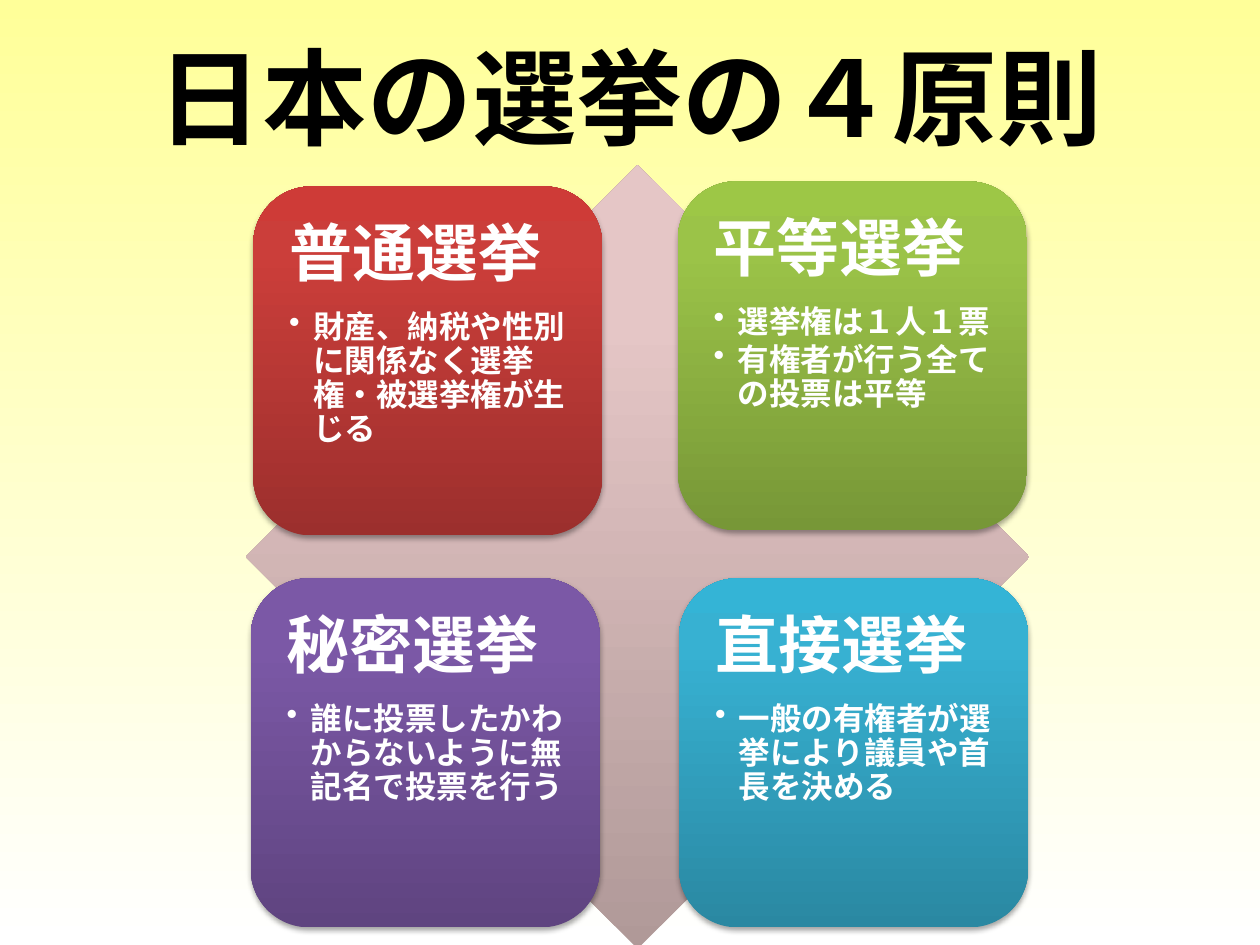
from lxml.etree import SubElement as Sub
from pptx import Presentation
from pptx.dml.color import RGBColor as Rgb
from pptx.enum.shapes import MSO_SHAPE as Kind
from pptx.enum.text import MSO_ANCHOR as Anchor, PP_ALIGN as Align
from pptx.oxml.ns import qn
from pptx.util import Inches, Pt

FONT = "Noto Sans CJK JP"
BLACK, WHITE = Rgb(0, 0, 0), Rgb(255, 255, 255)
CREAM = Rgb(0xFF, 0xFF, 0x99)
# Gradient stops at 0, 80 and 100 percent, from the bottom up
PINK = [Rgb(0xB0, 0x99, 0x98), Rgb(0xE5, 0xC6, 0xC6), Rgb(0xE6, 0xC7, 0xC6)]
RED = [Rgb(0x9C, 0x2F, 0x2D), Rgb(0xCB, 0x3E, 0x3A), Rgb(0xCE, 0x3B, 0x37)]
GREEN = [Rgb(0x77, 0x97, 0x37), Rgb(0x9B, 0xC3, 0x48), Rgb(0x9D, 0xC7, 0x46)]
PURPLE = [Rgb(0x5F, 0x44, 0x80), Rgb(0x7B, 0x58, 0xA6), Rgb(0x7C, 0x57, 0xA8)]
BLUE = [Rgb(0x2A, 0x88, 0xA2), Rgb(0x37, 0xB1, 0xD2), Rgb(0x34, 0xB4, 0xD6)]

SIDE = Inches(2.77)
CARDS = [
    (2.01, 1.48, RED, "普通選挙",
     ["財産、納税や性別に関係なく選挙権・被選挙権が生じる"]),
    (5.38, 1.44, GREEN, "平等選挙",
     ["選挙権は１人１票", "有権者が行う全ての投票は平等"]),
    (1.99, 4.59, PURPLE, "秘密選挙",
     ["誰に投票したかわからないように無記名で投票を行う"]),
    (5.39, 4.59, BLUE, "直接選挙",
     ["一般の有権者が選挙により議員や首長を決める"]),
]


def shade(fill, root, stops, angle):
    """Swap a solid fill under root for a linear gradient."""
    fill.solid()
    old = next(root.iter(qn("a:solidFill")))
    grad = old.makeelement(qn("a:gradFill"), {"rotWithShape": "1"})
    group = Sub(grad, qn("a:gsLst"))
    for place, tone in stops:
        stop = Sub(group, qn("a:gs"), pos=str(place * 1000))
        Sub(stop, qn("a:srgbClr"), val=str(tone))
    Sub(grad, qn("a:lin"), ang=str(angle * 60000), scaled="0")
    old.getparent().replace(old, grad)


def block(slide, kind, box, tones):
    """Add a preset shape with a rising gradient and no line."""
    shape = slide.shapes.add_shape(kind, *box)
    shape.shadow.inherit = False
    shade(shape.fill, shape._element.spPr, zip((0, 80, 100), tones), 270)
    shape.line.fill.background()
    return shape


def cast(shape):
    """Give a shape a soft shadow below."""
    effect = shape._element.spPr.find(qn("a:effectLst"))
    shadow = Sub(effect, qn("a:outerShdw"), blurRad=str(Pt(3.1)),
                 dist=str(Pt(1.8)), dir="5400000", rotWithShape="0")
    tone = Sub(shadow, qn("a:srgbClr"), val=str(BLACK))
    Sub(tone, qn("a:alpha"), val="35000")


def write(para, text, size, tone):
    """Add one bold run."""
    run = para.add_run()
    run.text = text
    font = run.font
    font.name, font.size, font.bold = FONT, Pt(size), True
    font.color.rgb = tone
    Sub(font._element, qn("a:ea"), typeface=FONT)


def frame(slide, box, inset):
    """Add a wrapping text box and return its text frame."""
    text = slide.shapes.add_textbox(*box).text_frame
    text.word_wrap = True
    text.margin_left = text.margin_right = inset
    text.margin_top = text.margin_bottom = inset
    return text


def bullet(para):
    """Set a hanging bullet."""
    props = para._p.get_or_add_pPr()
    props.set("marL", str(Inches(0.19)))
    props.set("indent", str(-Inches(0.19)))
    Sub(props, qn("a:buChar"), char="•")


def title(slide, box):
    text = frame(slide, box, Inches(0.05))
    text.vertical_anchor = Anchor.MIDDLE
    para = text.paragraphs[0]
    para.alignment = Align.CENTER
    write(para, "日本の選挙の４原則", 60, BLACK)


def card(slide, box, tones, head, points):
    left, top, width, height = box
    cast(block(slide, Kind.ROUNDED_RECTANGLE, box, tones))
    pad = Inches(0.135)
    inner = left + pad, top + pad, width - 2 * pad, height - 2 * pad
    text = frame(slide, inner, Inches(0.15))
    # Heading
    para = text.paragraphs[0]
    para.line_spacing, para.space_after = 0.9, Pt(12)
    write(para, head, 36, WHITE)
    # Points
    for point in points:
        para = text.add_paragraph()
        para.level = 1
        para.line_spacing, para.space_after = 0.9, Pt(2)
        bullet(para)
        write(para, point, 18, WHITE)


def main():
    deck = Presentation()
    deck.slide_width, deck.slide_height = Inches(10), Inches(7.5)
    slide = deck.slides.add_slide(deck.slide_layouts[6])
    shade(slide.background.fill, slide._element,
          [(0, CREAM), (100, WHITE)], 90)
    title(slide, (Inches(0.31), Inches(0.13), Inches(9.38), Inches(1.25)))
    # Diamond behind the four cards
    size = Inches(6.22)
    block(slide, Kind.DIAMOND, (Inches(1.95), Inches(1.31), size, size), PINK)
    for left, top, tones, head, points in CARDS:
        box = Inches(left), Inches(top), SIDE, SIDE
        card(slide, box, tones, head, points)
    deck.save("out.pptx")


if __name__ == "__main__":
    main()
